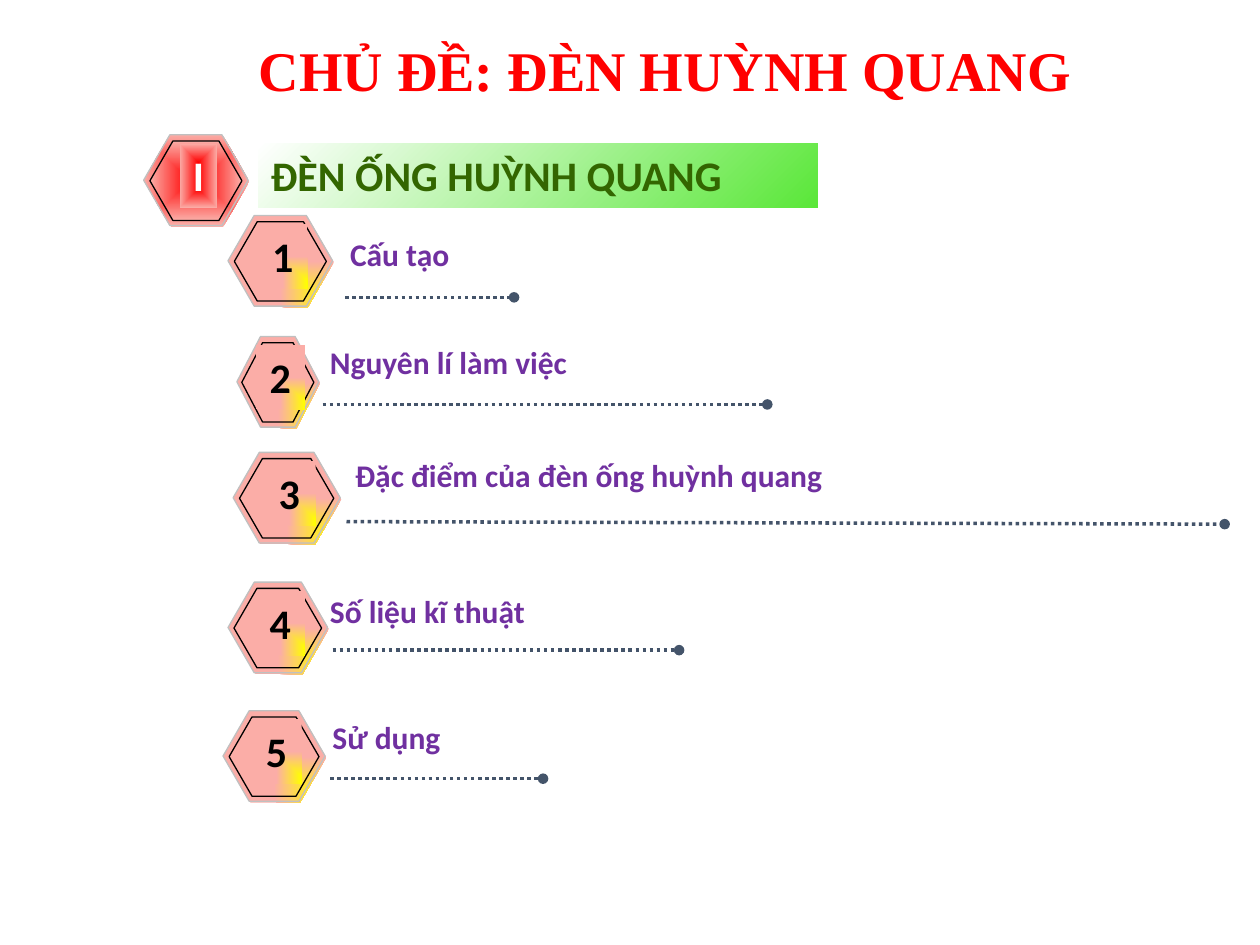
from dataclasses import dataclass

from lxml.etree import SubElement
from pptx import Presentation
from pptx.dml.color import RGBColor
from pptx.enum.dml import MSO_LINE
from pptx.enum.shapes import MSO_CONNECTOR, MSO_SHAPE
from pptx.enum.text import MSO_ANCHOR, MSO_AUTO_SIZE, PP_ALIGN
from pptx.oxml.ns import qn
from pptx.util import Inches, Pt

RED = RGBColor(0xFF, 0x00, 0x00)
YELLOW = RGBColor(0xFF, 0xFF, 0x00)
PINK = RGBColor(0xFB, 0xAD, 0xA7)
LIME = RGBColor(0x5A, 0xE7, 0x39)
GREEN = RGBColor(0x33, 0x66, 0x00)
PURPLE = RGBColor(0x70, 0x30, 0xA0)
SLATE = RGBColor(0x44, 0x54, 0x6A)
SILVER = RGBColor(0xC0, 0xC0, 0xC0)
BLACK = RGBColor(0x00, 0x00, 0x00)
WHITE = RGBColor(0xFF, 0xFF, 0xFF)


@dataclass
class Glow:
    """Two-colour gradient that spreads from the focus (left, top, right, bottom)."""
    start: RGBColor
    end: RGBColor
    kind: str
    focus: tuple[int, int, int, int]


@dataclass
class Badge:
    mark: str
    left: float
    top: float
    width: float
    tile: float


@dataclass
class Item:
    badge: Badge
    text: str
    box: tuple[float, float, float]
    rule: tuple[float, float, float, float]


CORE = Glow(RED, PINK, "shape", (50, 50, 50, 50))
CORNER = Glow(YELLOW, PINK, "rect", (100, 100, 0, 0))

HEAD = Badge("I", 1.14, 1.07, 0.83, 0.3)
ITEMS = [
    Item(Badge("1", 1.81, 1.71, 0.83, 0.39), "Cấu tạo",
         (2.68, 1.82, 1.64), (2.74, 2.36, 4.08, 2.36)),
    Item(Badge("2", 1.88, 2.67, 0.65, 0.39), "Nguyên lí làm việc",
         (2.52, 2.67, 3.67), (2.56, 3.21, 6.09, 3.21)),
    Item(Badge("3", 1.85, 3.59, 0.85, 0.42), "Đặc điểm của đèn ống huỳnh quang",
         (2.72, 3.57, 7.01), (2.75, 4.14, 9.72, 4.16)),
    Item(Badge("4", 1.81, 4.62, 0.79, 0.39), "Số liệu kĩ thuật",
         (2.52, 4.65, 3.47), (2.64, 5.16, 5.39, 5.16)),
    Item(Badge("5", 1.77, 5.64, 0.81, 0.4), "Sử dụng",
         (2.54, 5.65, 1.91), (2.62, 6.18, 4.31, 6.18)),
]


def blend(shape, start: RGBColor, end: RGBColor) -> None:
    shape.fill.gradient()
    for stop, pos, color in zip(shape.fill.gradient_stops, (0, 1), (start, end)):
        stop.position = pos
        stop.color.rgb = color


def spread(shape, glow: Glow) -> None:
    """Fill with a gradient that runs along a path instead of a line."""
    blend(shape, glow.start, glow.end)
    grad = shape.element.spPr.find(qn("a:gradFill"))
    grad.remove(grad.find(qn("a:lin")))
    route = SubElement(grad, qn("a:path"), {"path": glow.kind})
    sides = {side: str(part * 1000) for side, part in zip("ltrb", glow.focus)}
    SubElement(route, qn("a:fillToRect"), sides)


def add_form(shapes, kind: MSO_SHAPE, left: float, top: float,
             width: float, height: float, edge: RGBColor | None = None):
    form = shapes.add_shape(kind, Inches(left), Inches(top), Inches(width), Inches(height))
    form.shadow.inherit = False
    if edge is None:
        form.line.fill.background()
    else:
        form.line.color.rgb = edge
        form.line.width = Pt(0.75)
    return form


def set_text(shape, text: str, size: int, color: RGBColor, wrap: bool = True,
             align: PP_ALIGN = PP_ALIGN.LEFT, face: str = "Calibri") -> None:
    frame = shape.text_frame
    frame.text = text
    frame.word_wrap = wrap
    frame.auto_size = MSO_AUTO_SIZE.NONE
    frame.vertical_anchor = MSO_ANCHOR.TOP
    para = frame.paragraphs[0]
    para.alignment = align
    para.font.name = face
    para.font.size = Pt(size)
    para.font.bold = True
    para.font.color.rgb = color


def add_badge(shapes, badge: Badge, glow: Glow, ink: RGBColor) -> None:
    left, top, width = badge.left, badge.top, badge.width
    layers = [
        (left + 0.01, top + 0.01, width, 0.72, None),
        (left, top, width, 0.72, SILVER),
        (left + 0.06 * width, top + 0.05, 0.88 * width, 0.63, BLACK),
    ]
    for layer in layers:
        hexagon = add_form(shapes, MSO_SHAPE.HEXAGON, *layer)
        hexagon.adjustments[0] = 0.289
        spread(hexagon, glow)
    middle = left + width / 2 + 0.02
    tile = add_form(shapes, MSO_SHAPE.RECTANGLE, middle - badge.tile / 2,
                    top + 0.07, badge.tile, 0.51)
    spread(tile, glow)
    set_text(tile, badge.mark, 24, ink, wrap=False, align=PP_ALIGN.CENTER)


def add_rule(shapes, ends: tuple[float, float, float, float]) -> None:
    """Draw a dotted line that closes with a round dot."""
    rule = shapes.add_connector(MSO_CONNECTOR.STRAIGHT, *map(Inches, ends))
    rule.line.color.rgb = SLATE
    rule.line.width = Pt(2)
    rule.line.dash_style = MSO_LINE.ROUND_DOT
    SubElement(rule.line._get_or_add_ln(), qn("a:tailEnd"), {"type": "oval"})
    SubElement(rule.element.spPr, qn("a:effectLst"))


def add_item(shapes, item: Item) -> None:
    add_badge(shapes, item.badge, CORNER, BLACK)
    add_rule(shapes, item.rule)
    left, top, width = map(Inches, item.box)
    label = shapes.add_textbox(left, top, width, Inches(0.57))
    set_text(label, item.text, 18, PURPLE)


def add_head(shapes) -> None:
    banner = add_form(shapes, MSO_SHAPE.RECTANGLE, 2.05, 1.14, 4.44, 0.51)
    blend(banner, WHITE, LIME)
    banner.fill.gradient_angle = 315
    set_text(banner, "ĐÈN ỐNG HUỲNH QUANG", 24, GREEN)
    add_badge(shapes, HEAD, CORE, WHITE)


def main() -> None:
    deck = Presentation()
    deck.slide_width, deck.slide_height = Inches(10), Inches(7.5)
    slide = deck.slides.add_slide(deck.slide_layouts[5])

    title = slide.shapes.title
    title.left, title.top = Inches(0.85), Inches(0.23)
    title.width, title.height = Inches(8.86), Inches(0.62)
    set_text(title, "CHỦ ĐỀ: ĐÈN HUỲNH QUANG", 32, RED,
             align=PP_ALIGN.CENTER, face="Times New Roman")

    add_head(slide.shapes.add_group_shape().shapes)
    for item in ITEMS:
        add_item(slide.shapes.add_group_shape().shapes, item)
    deck.save("out.pptx")


if __name__ == "__main__":
    main()
